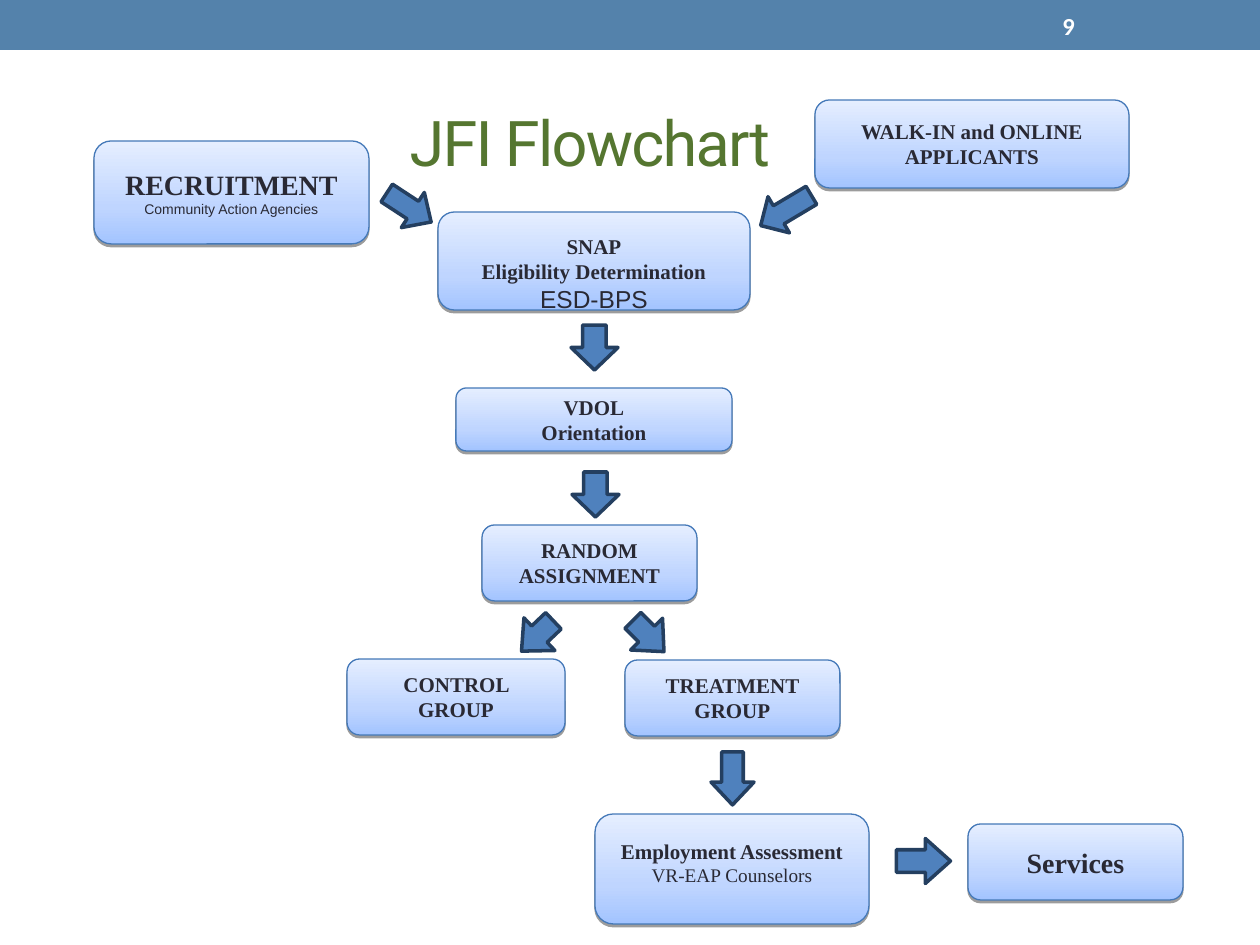
from copy import deepcopy
from pptx import Presentation
from pptx.dml.color import RGBColor
from pptx.enum.shapes import MSO_SHAPE as Kind
from pptx.enum.text import MSO_ANCHOR as Anchor, PP_ALIGN as Align
from pptx.oxml.ns import qn
from pptx.oxml.xmlchemy import OxmlElement as Elem
from pptx.util import Emu, Pt

SCALE = 914400 / 126
SERIF, SANS = "Times New Roman", "Arial"
STOPS = [(0, "A3C4FF"), (0.35, "BFD5FF"), (1, "E5EEFF")]
HEAD = dict(size=Pt(12), name=SERIF, bold=True)
BIG = HEAD | dict(size=Pt(16))
SMALL = dict(size=Pt(8), name=SANS, bold=False)
UNIT = dict(size=Pt(14), name=SANS, bold=False)
ROLE = dict(size=Pt(11), name=SERIF, bold=False)

STEPS = [
    ((94, 141, 275, 103), None, [("RECRUITMENT", BIG), ("Community Action Agencies", SMALL)]),
    ((815, 100, 314, 88), None, [("WALK-IN and ONLINE APPLICANTS", HEAD)]),
    ((438, 212, 312, 98), 17, [("SNAP", HEAD), ("Eligibility Determination", HEAD), ("ESD-BPS", UNIT)]),
    ((456, 388, 276, 63), None, [("VDOL", HEAD), ("Orientation", HEAD)]),
    ((482, 525, 215, 76), None, [("RANDOM ASSIGNMENT", HEAD)]),
    ((347, 659, 218, 76), None, [("CONTROL GROUP", HEAD)]),
    ((625, 660, 215, 76), None, [("TREATMENT GROUP", HEAD)]),
    ((595, 814, 274, 110), 19, [("Employment Assessment", HEAD), ("VR-EAP Counselors", ROLE)]),
    ((968, 824, 215, 76), None, [("Services", BIG)]),
]
ARROWS = [
    ((388, 181, 42, 53), 303.2, 0.52),
    ((765, 181, 42, 59), 59.2, 0.5),
    ((571, 325, 47, 45), 0, 0.5),
    ((572, 472, 47, 45), 0, 0.5),
    ((515, 614, 45, 44), 46.5, 0.56),
    ((626, 614, 45, 44), 315.1, 0.56),
    ((711, 752, 43, 53), 0, 0.53),
    ((901, 834, 45, 54), 270, 0.56),
]


def px(num):
    """Turn px into EMU."""
    return Emu(round(num * SCALE))


def tint(code):
    """Turn a hex string into a colour."""
    return RGBColor.from_string(code)


def style(item, form):
    """Set each format value on an item."""
    for key, val in form.items():
        setattr(item, key, val)


def write(para, text, form, color):
    """Add one formatted run and return it."""
    run = para.add_run()
    run.text = text
    style(run.font, form)
    run.font.color.rgb = tint(color)
    return run


def draw(slide, kind, box, fill, line=None, width=0):
    """Add a shape with plain fill and line."""
    shape = slide.shapes.add_shape(kind, *map(px, box))
    shape.shadow.inherit = False
    shape.fill.solid()
    shape.fill.fore_color.rgb = tint(fill)
    if line:
        shape.line.color.rgb = tint(line)
        shape.line.width = Pt(width)
    else:
        shape.line.fill.background()
    return shape


def shade(shape):
    """Give a shape the upward gradient and a drop shadow."""
    shape.fill.gradient()
    shape.fill.gradient_angle = 90
    props = shape._element.spPr
    stops = props.find(".//" + qn("a:gsLst"))
    stops.append(deepcopy(stops[0]))
    for stop, (pos, color) in zip(shape.fill.gradient_stops, STOPS):
        stop.position = pos
        stop.color.rgb = tint(color)
    drop = Elem("a:outerShdw")
    for key, val in dict(blurRad=0, dist=20000, dir=5400000, rotWithShape=0).items():
        drop.set(key, str(val))
    hue, alpha = Elem("a:srgbClr"), Elem("a:alpha")
    hue.set("val", "000000")
    alpha.set("val", "38000")
    hue.append(alpha)
    drop.append(hue)
    props.find(qn("a:effectLst")).append(drop)


def step(slide, box, top, lines):
    """Draw one flowchart step with its lines of text."""
    shape = draw(slide, Kind.ROUNDED_RECTANGLE, box, "BFD5FF", "4579B8", 0.75)
    shade(shape)
    frame = shape.text_frame
    style(frame, dict(word_wrap=True, margin_left=px(16), margin_right=px(16),
                      vertical_anchor=Anchor.MIDDLE))
    if top:
        style(frame, dict(margin_top=px(top), vertical_anchor=Anchor.TOP))
    for num, (text, form) in enumerate(lines):
        para = frame.add_paragraph() if num else frame.paragraphs[0]
        para.alignment = Align.CENTER
        write(para, text, form, "292934")


def arrow(slide, box, turn, tip):
    """Draw one block arrow turned to its target."""
    shape = draw(slide, Kind.DOWN_ARROW, box, "4F81BD", "243F60", 2)
    shape.rotation = turn
    shape.adjustments[1] = tip


def banner(slide, box):
    """Draw the top bar with the page number."""
    left, top, wide, high = box
    draw(slide, Kind.RECTANGLE, box, "5482AB")
    page = slide.shapes.add_textbox(*map(px, (left + 1050, top + 3, 147, high - 5)))
    style(page.text_frame, dict(word_wrap=True, vertical_anchor=Anchor.MIDDLE))
    form = dict(size=Pt(14), name="Calibri", bold=True)
    write(page.text_frame.paragraphs[0], "9", form, "FFFFFF")


def title(slide, box):
    """Place and format the title."""
    shape = slide.shapes.title
    style(shape, dict(zip(("left", "top", "width", "height"), map(px, box))))
    shape.text_frame.vertical_anchor = Anchor.MIDDLE
    para = shape.text_frame.paragraphs[0]
    para.alignment = Align.LEFT
    para._p.get_or_add_pPr().set("marL", str(px(334)))
    run = write(para, "JFI Flowchart", dict(size=Pt(36), name="Roboto"), "557630")
    run._r.get_or_add_rPr().set("spc", "-100")


def main():
    """Build and save the slide."""
    deck = Presentation()
    style(deck, dict(slide_width=px(1260), slide_height=px(945)))
    slide = deck.slides.add_slide(deck.slide_layouts[5])
    banner(slide, (0, 0, 1260, 50))
    title(slide, (63, 73, 1134, 136))
    for item in STEPS:
        step(slide, *item)
    for item in ARROWS:
        arrow(slide, *item)
    deck.save("out.pptx")


if __name__ == "__main__":
    main()
